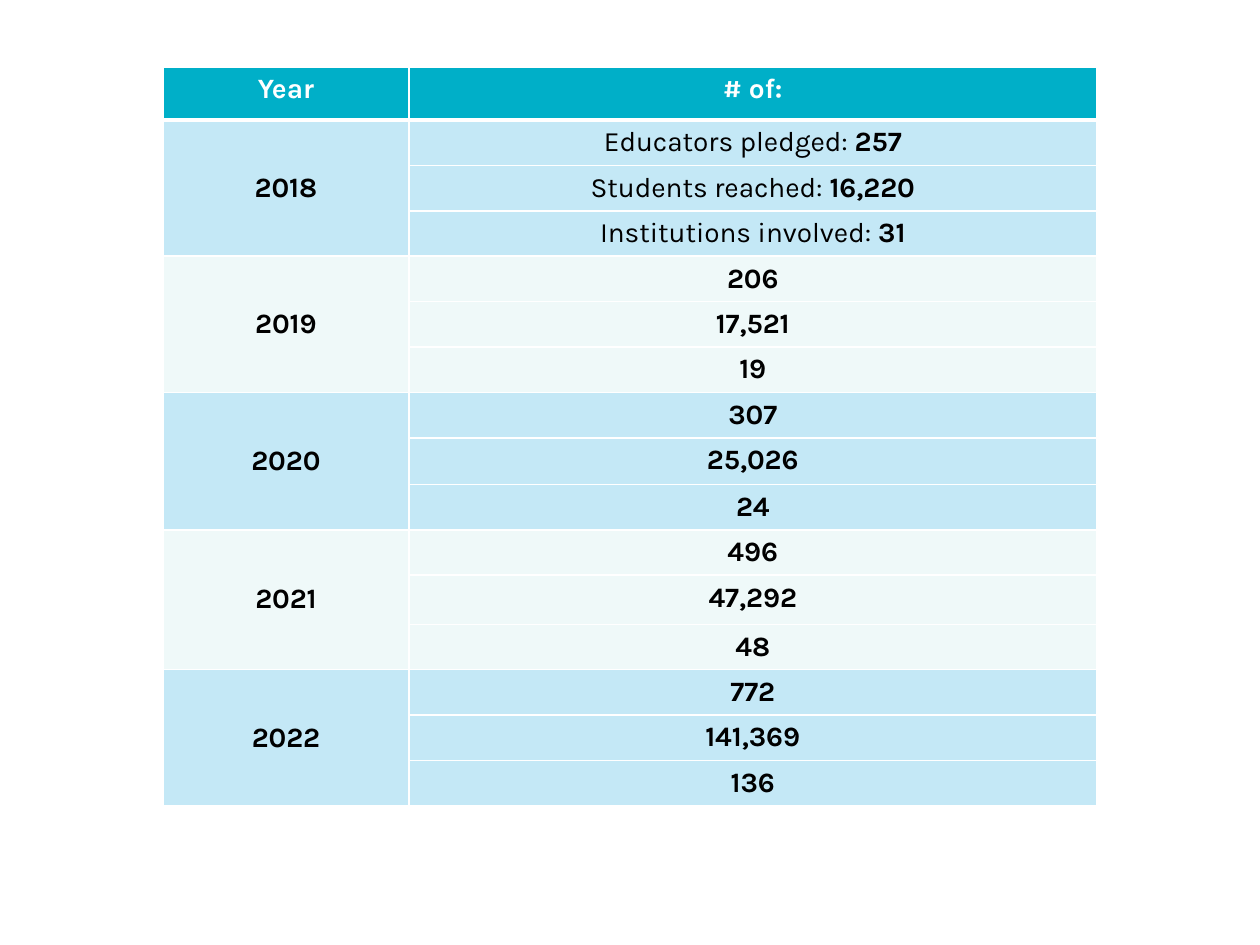
"""Build a slide with a table of yearly pledge figures."""
from dataclasses import dataclass

from lxml.etree import SubElement
from pptx import Presentation
from pptx.dml.color import RGBColor
from pptx.enum.text import MSO_ANCHOR as Anchor, PP_ALIGN as Align
from pptx.oxml.ns import qn
from pptx.table import Table, _Cell as Cell
from pptx.util import Cm, Pt

WHITE, BLACK, TEAL = "FFFFFF", "000000", "00AFC8"
BANDS = ("C4E8F6", "EFF9F9")
COL_WIDTHS = (4.95, 13.87)
HEADER_HEIGHT, ROW_HEIGHT = 1.07, 0.91
TALL_ROWS = {8: 0.94, 11: 0.99}


@dataclass
class Year:
    """Figures for educators, students and institutions in one year."""
    name: str
    values: tuple[str, str, str]
    labels: tuple[str, str, str] = ("", "", "")


YEARS = [
    Year("2018", ("257", "16,220", "31"),
         ("Educators pledged: ", "Students reached: ", "Institutions involved: ")),
    Year("2019", ("206", "17,521", "19")),
    Year("2020", ("307", "25,026", "24")),
    Year("2021", ("496", "47,292", "48")),
    Year("2022", ("772", "141,369", "136")),
]


def rgb(color: str) -> RGBColor:
    """Turn a hex string into a colour."""
    return RGBColor.from_string(color)


def set_borders(cell: Cell, top: float = 1, bottom: float = 1) -> None:
    """Give a cell white borders with widths in points."""
    tc_pr = cell._tc.get_or_add_tcPr()
    for side, width in zip("LRTB", (1, 1, top, bottom)):
        ln = SubElement(tc_pr, qn(f"a:ln{side}"), w=str(Pt(width)))
        fill = SubElement(ln, qn("a:solidFill"))
        SubElement(fill, qn("a:srgbClr"), val=WHITE)


def fill_cell(cell: Cell, fill: str) -> None:
    """Set the fill of a cell."""
    cell.fill.solid()
    cell.fill.fore_color.rgb = rgb(fill)


def add_text(cell: Cell, value: str, label: str = "", color: str = BLACK) -> None:
    """Write a centred bold value after an optional plain label."""
    p = cell.text_frame.paragraphs[0]
    p.alignment = Align.CENTER
    for text, bold in ((label, False), (value, True)):
        if text:
            r = p.add_run()
            r.text = text
            r.font.name, r.font.size, r.font.bold = "Karla", Pt(16), bold
            r.font.color.rgb = rgb(color)


def draw_header(table: Table) -> None:
    """Fill in the header row."""
    for col, title in enumerate(("Year", "# of:")):
        cell = table.cell(0, col)
        set_borders(cell, bottom=3)
        fill_cell(cell, TEAL)
        add_text(cell, title, color=WHITE)


def draw_year(table: Table, index: int, year: Year) -> None:
    """Fill in the three rows of one year."""
    first = 1 + 3 * index
    for row, (value, label) in enumerate(zip(year.values, year.labels), first):
        for col in range(2):
            set_borders(table.cell(row, col), top=3 if row == 1 else 1)
            fill_cell(table.cell(row, col), BANDS[index % 2])
        add_text(table.cell(row, 1), value, label)
    name_cell = table.cell(first, 0)
    name_cell.merge(table.cell(first + 2, 0))
    name_cell.vertical_anchor = Anchor.MIDDLE
    add_text(name_cell, year.name)


def main() -> None:
    """Build and save the slide."""
    prs = Presentation()
    prs.slide_width, prs.slide_height = Cm(25.4), Cm(19.05)
    s = prs.slides.add_slide(prs.slide_layouts[6])
    rows = 1 + 3 * len(YEARS)
    heights = [HEADER_HEIGHT] + [TALL_ROWS.get(i, ROW_HEIGHT) for i in range(1, rows)]
    table = s.shapes.add_table(rows, 2, Cm(3.29), Cm(1.35),
                               Cm(sum(COL_WIDTHS)), Cm(sum(heights))).table
    for column, width in zip(table.columns, COL_WIDTHS):
        column.width = Cm(width)
    for row, height in zip(table.rows, heights):
        row.height = Cm(height)
    draw_header(table)
    for index, year in enumerate(YEARS):
        draw_year(table, index, year)
    prs.save("out.pptx")


if __name__ == "__main__":
    main()
